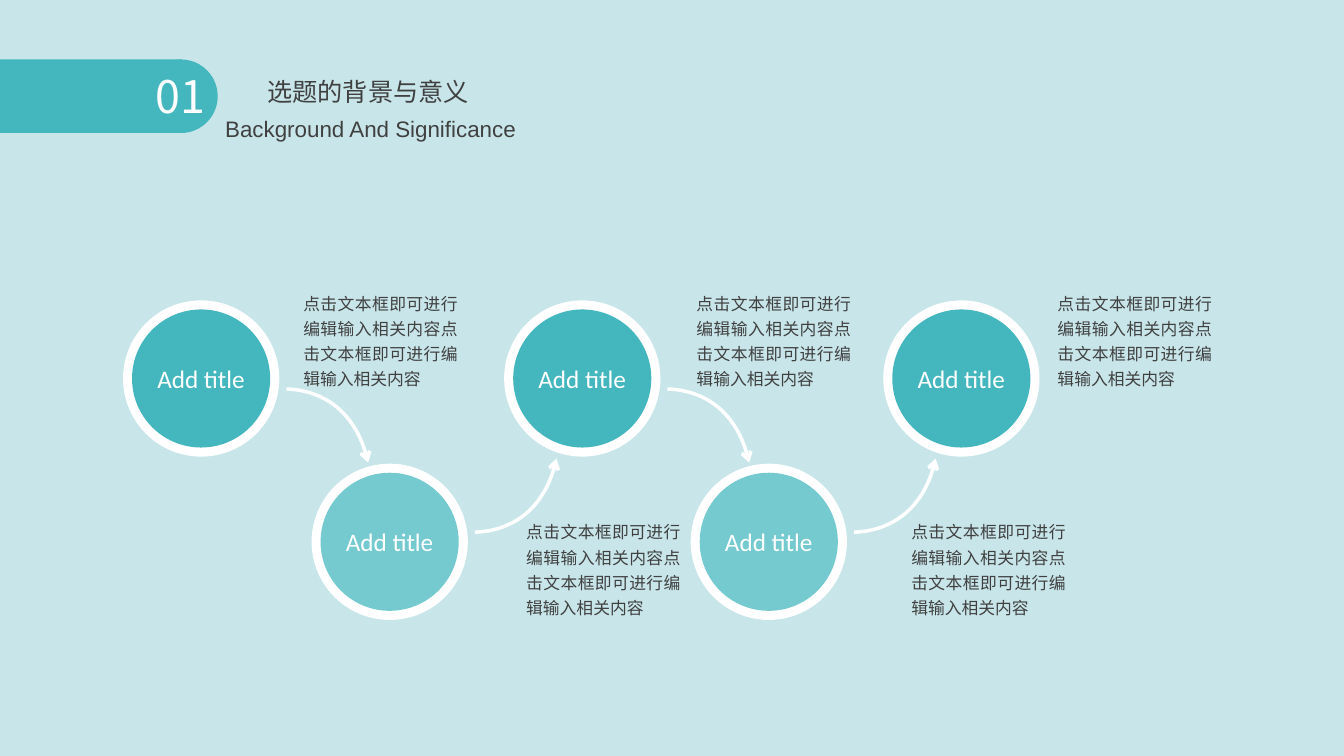
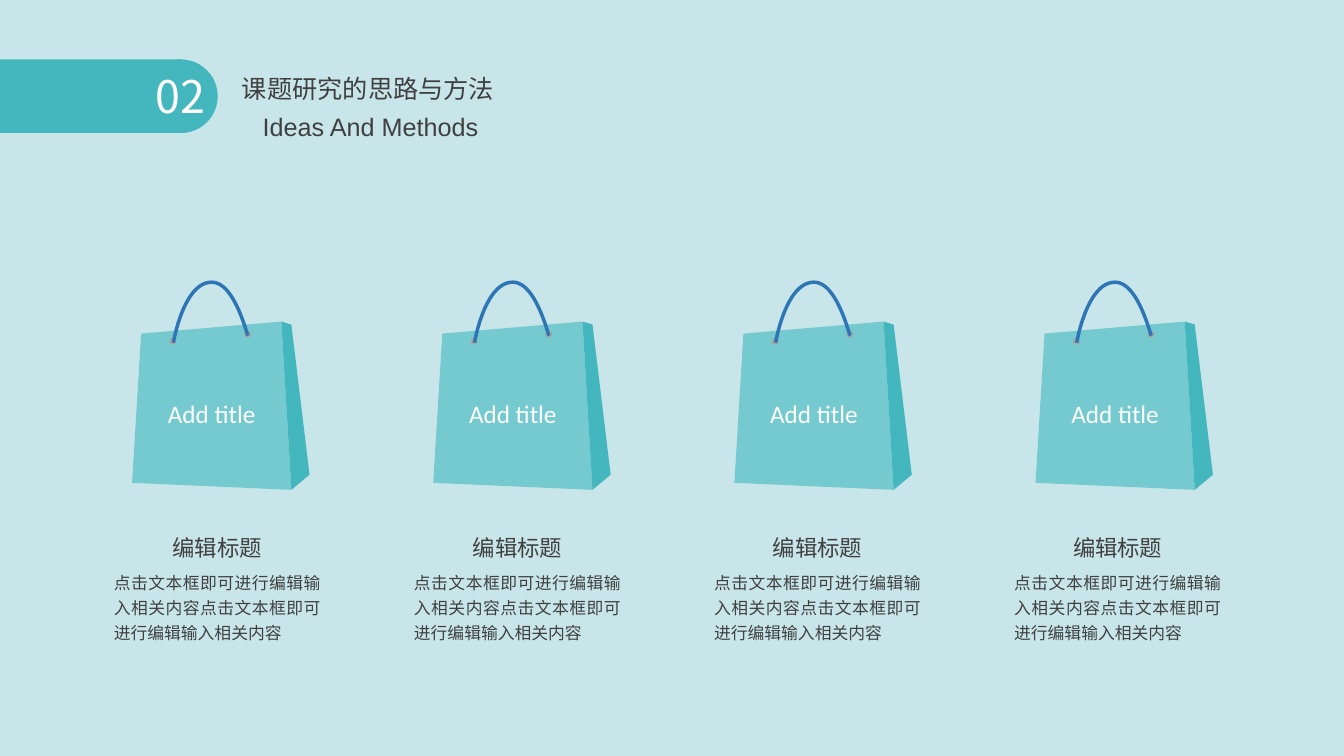
from lxml.etree import SubElement
from pptx import Presentation
from pptx.dml.color import RGBColor
from pptx.enum.shapes import MSO_SHAPE as SHAPE
from pptx.enum.text import MSO_ANCHOR as ANCHOR, MSO_AUTO_SIZE as AUTOSIZE, PP_ALIGN as ALIGN
from pptx.oxml.ns import qn
from pptx.util import Inches, Pt

BACKGROUND, TEAL, AQUA = "C8E6EA", "44B7BE", "74CACE"
WHITE, INK, GREY, BLUE = "FFFFFF", "404040", "A6A6A6", "2E75B6"
CJK = "Noto Sans CJK SC"
BODY = "点击文本框即可进行编辑输入相关内容点击文本框即可进行编辑输入相关内容"


def paint(shape, fill=None, line=None, width=0):
    shape.shadow.inherit = False
    if fill:
        shape.fill.solid()
        shape.fill.fore_color.rgb = RGBColor.from_string(fill)
    else:
        shape.fill.background()
    if line:
        shape.line.color.rgb = RGBColor.from_string(line)
        shape.line.width = Pt(width)
    else:
        shape.line.fill.background()


def write(shape, text, size, color=INK, font=CJK, align=ALIGN.CENTER,
          spacing=1.0, wrap=True, anchor=ANCHOR.TOP):
    frame = shape.text_frame
    frame.word_wrap = wrap
    frame.auto_size = AUTOSIZE.NONE
    frame.vertical_anchor = anchor
    paragraph = frame.paragraphs[0]
    paragraph.alignment = align
    paragraph.line_spacing = spacing
    run = paragraph.add_run()
    run.text = text
    run.font.size = Pt(size)
    run.font.color.rgb = RGBColor.from_string(color)
    run.font.name = font
    SubElement(run._r.get_or_add_rPr(), qn("a:ea"), typeface=font)


# Cubic curves, sampled into points in inches
curves = {}
for part, controls in {
    "arrow": [(0, 0), (0.36, 0.01), (0.7, 0.22), (0.81, 0.73)],
    "handle left": [(0.41, 0.6), (0.41, 0.6), (0.51, 0), (0.79, 0)],
    "handle right": [(0.79, 0), (1.02, 0), (1.14, 0.53), (1.15, 0.53)],
}.items():
    curves[part] = []
    for t in [i / 24 for i in range(25)]:
        weights = ((1 - t) ** 3, 3 * t * (1 - t) ** 2, 3 * t * t * (1 - t), t ** 3)
        curves[part].append([sum(w * c[axis] for w, c in zip(weights, controls))
                             for axis in (0, 1)])

prs = Presentation()
prs.slide_width, prs.slide_height = Inches(13.33), Inches(7.5)
master_fill = prs.slide_master.background.fill
master_fill.solid()
master_fill.fore_color.rgb = RGBColor.from_string(BACKGROUND)

# Header of both slides
slides = []
for number, title, title_box, subtitle, subtitle_top, subtitle_size in [
    ("01", "选题的背景与意义", (2.55, 0.41, 2.22, 0.62),
     "Background And Significance", 1.09, 16),
    ("02", "课题研究的思路与方法", (2.3, 0.38, 2.73, 0.62),
     "Ideas And Methods", 1.06, 18),
]:
    slide = prs.slides.add_slide(prs.slide_layouts[5])
    slides.append(slide)
    for kind, left, width in [(SHAPE.RECTANGLE, 0, 1.81), (SHAPE.OVAL, 1.43, 0.73)]:
        band = slide.shapes.add_shape(kind, Inches(left), Inches(0.59),
                                      Inches(width), Inches(0.73))
        paint(band, TEAL)
    number_box = slide.shapes.add_textbox(Inches(1.31), Inches(0.63), Inches(0.96), Inches(0.64))
    write(number_box, number, 32, WHITE)
    heading = slide.shapes.title
    heading.left, heading.top, heading.width, heading.height = map(Inches, title_box)
    write(heading, title, 18, align=ALIGN.LEFT, spacing=2.0, wrap=False)
    subtitle_box = slide.shapes.add_textbox(Inches(0.93), Inches(subtitle_top),
                                            Inches(5.49), Inches(0.4))
    write(subtitle_box, subtitle, subtitle_size, font="Arial")

background_slide, methods_slide = slides

# Slide 1: chain of circles, alternately up and down
RING, DISC = 1.55, 1.37
RIM = (RING - DISC) / 2
steps = [(1.22, 2.91), (3.09, 5.12), (5.0, 6.81), (6.85, 8.94), (8.76, 10.39)]
for index, (left, text_left) in enumerate(steps):
    upper = index % 2 == 0
    top, text_top, disc_color = (2.98, 2.81, TEAL) if upper else (4.6, 5.08, AQUA)
    shapes = background_slide.shapes
    ring = shapes.add_shape(SHAPE.OVAL, Inches(left), Inches(top), Inches(RING), Inches(RING))
    paint(ring, WHITE)
    disc = shapes.add_shape(SHAPE.OVAL, Inches(left + RIM), Inches(top + RIM),
                            Inches(DISC), Inches(DISC))
    paint(disc, disc_color)
    write(disc, "Add title", 18, WHITE, "Calibri", wrap=False, anchor=ANCHOR.MIDDLE)
    description = shapes.add_textbox(Inches(text_left), Inches(text_top),
                                     Inches(1.73), Inches(1.11))
    write(description, BODY, 12, align=ALIGN.JUSTIFY, spacing=1.25)
    if index < len(steps) - 1:
        start_y, direction = (3.86, 1) if upper else (5.28, -1)
        points = [(Inches(left + 1.62 + x), Inches(start_y + direction * y))
                  for x, y in curves["arrow"]]
        builder = shapes.build_freeform(*points[0])
        builder.add_line_segments(points[1:], close=False)
        arrow = builder.convert_to_shape()
        paint(arrow, line=WHITE, width=2.5)
        SubElement(arrow.line._get_or_add_ln(), qn("a:tailEnd"), type="arrow")

# Slide 2: four shopping bags with captions
BAG_TOP = 2.8
BAG_PITCH, CAPTION_PITCH = 8.96 / 3, 8.93 / 3
front = [(0.09, 0.51), (0, 1.99), (1.58, 2.06), (1.48, 0.39)]
side = [(1.58, 2.06), (1.76, 1.91), (1.58, 0.42), (1.48, 0.39)]
handle = curves["handle left"] + curves["handle right"][1:]
for index in range(4):
    bag_left = 1.31 + index * BAG_PITCH
    bag = methods_slide.shapes.add_group_shape().shapes
    for outline, fill, line in [(front, AQUA, None), (side, TEAL, None), (handle, None, BLUE)]:
        points = [(Inches(bag_left + x), Inches(BAG_TOP + y)) for x, y in outline]
        if outline is handle:
            for x, y in [(0.37, 0.55), (1.11, 0.48)]:
                eyelet = bag.add_shape(SHAPE.OVAL, Inches(bag_left + x), Inches(BAG_TOP + y),
                                       Inches(0.07), Inches(0.07))
                paint(eyelet, GREY)
        builder = bag.build_freeform(*points[0])
        builder.add_line_segments(points[1:], close=outline is not handle)
        paint(builder.convert_to_shape(), fill, line, 2.5)
    caption_left = 1.03 + index * CAPTION_PITCH
    for box, text, style in [
        ((bag_left + 0.21, 3.9, 1.16, 0.4), "Add title",
         dict(size=18, color=WHITE, font="Calibri")),
        ((caption_left + 0.38, 5.25, 1.49, 0.37), "编辑标题", dict(size=16)),
        ((caption_left, 5.58, 2.25, 0.86), BODY,
         dict(size=12, align=ALIGN.JUSTIFY, spacing=1.25)),
    ]:
        write(methods_slide.shapes.add_textbox(*map(Inches, box)), text, **style)

prs.save("out.pptx")
